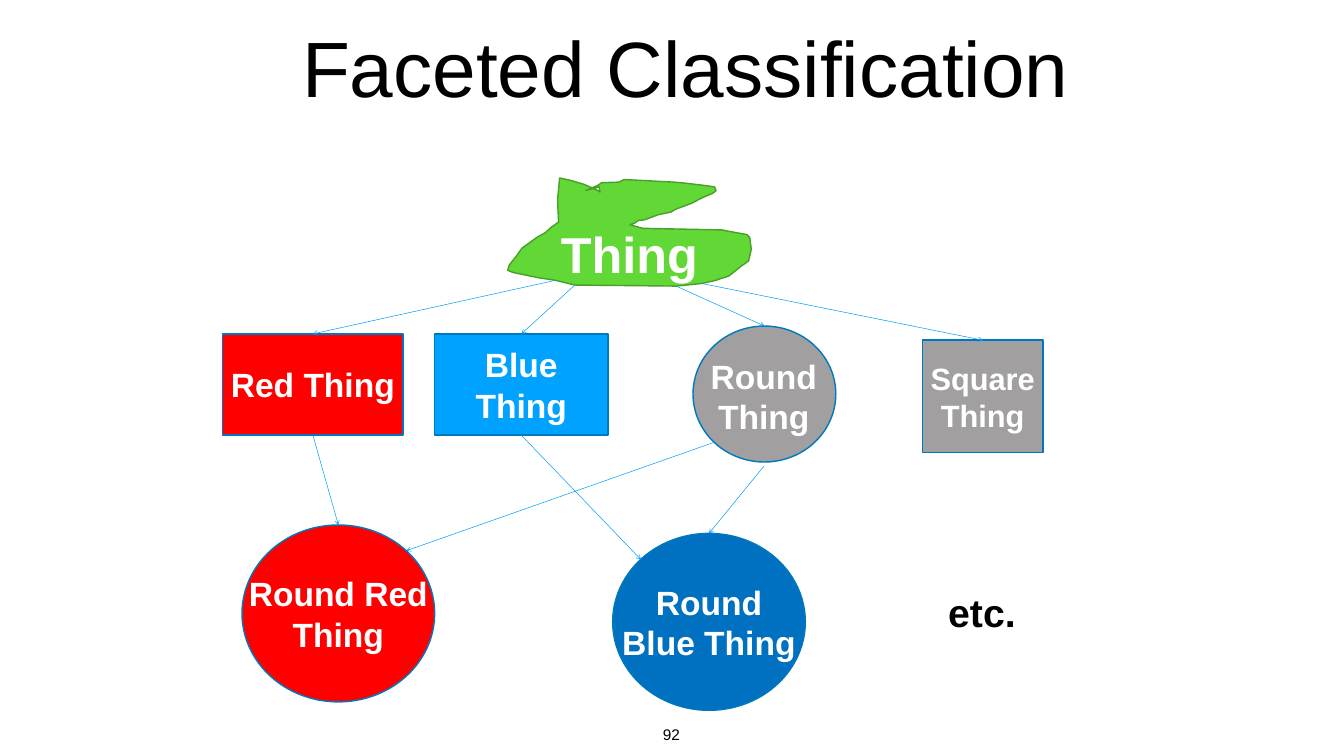
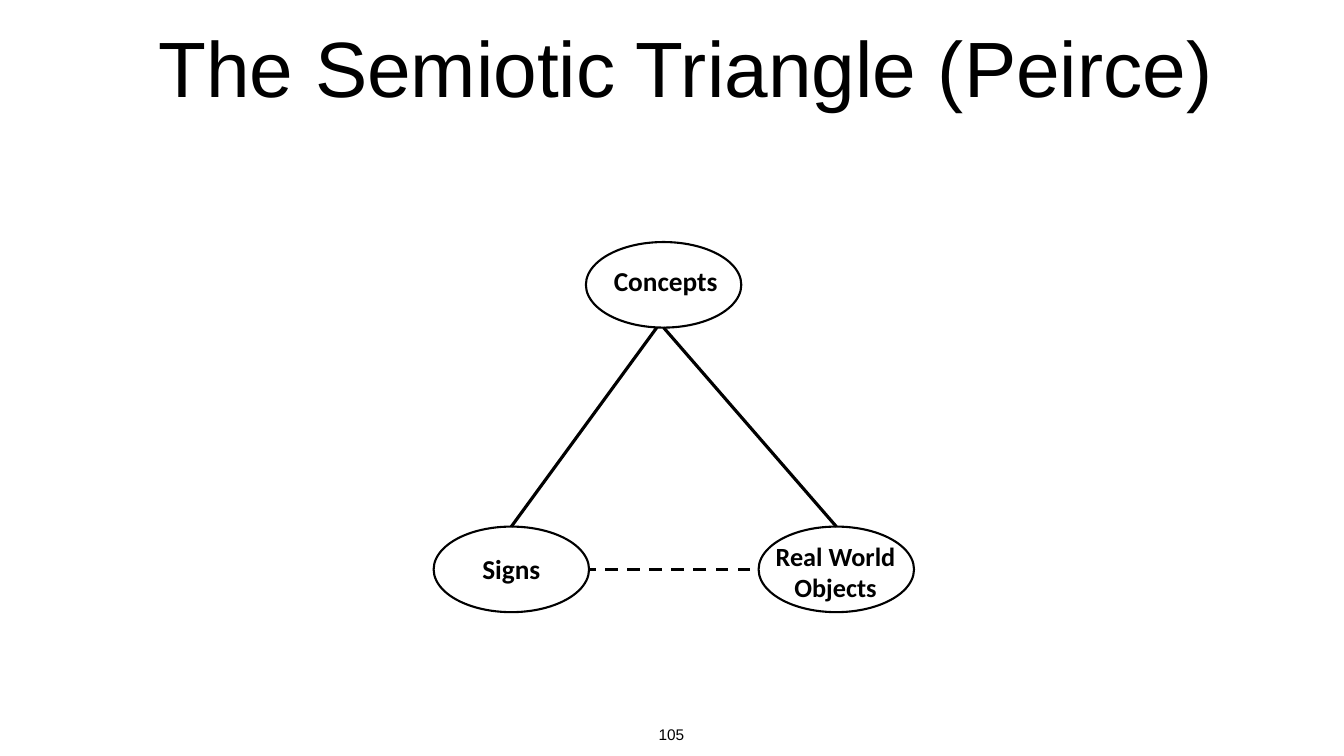
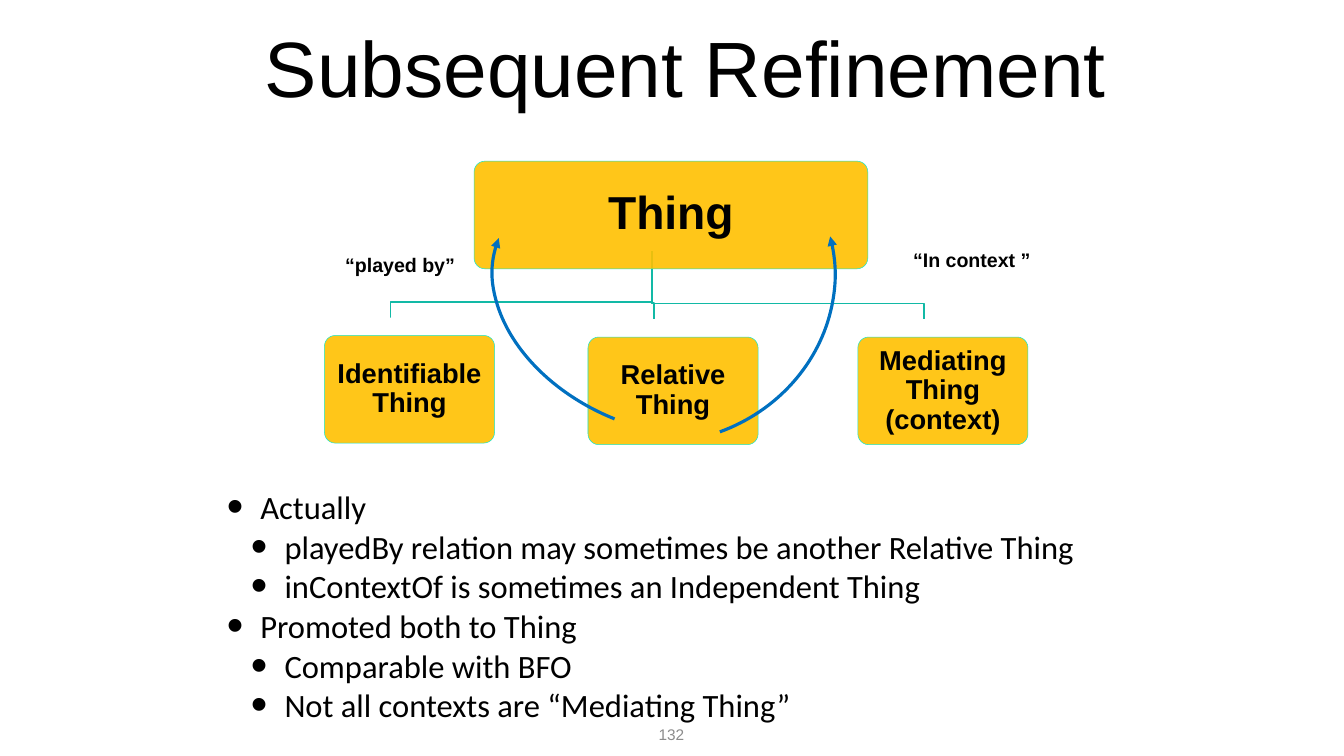
from lxml.etree import SubElement
from pptx import Presentation
from pptx.dml.color import RGBColor
from pptx.enum.dml import MSO_LINE
from pptx.enum.shapes import MSO_CONNECTOR, MSO_SHAPE
from pptx.enum.text import MSO_ANCHOR, PP_ALIGN
from pptx.oxml.ns import qn
from pptx.util import Pt

PX = 9525
SLIDE_SIZE = (2560, 1440)
TITLE_BOX = (261, 0, 2089, 251)
NUMBER_BOX = (1243, 1373, 72, 51)
DEFAULT_INSETS = (10, 5, 10, 5)
EVEN_INSETS = (8, 8, 8, 8)

BLACK = RGBColor(0x00, 0x00, 0x00)
WHITE = RGBColor(0xFF, 0xFF, 0xFF)
NUMBER_GREY = RGBColor(0x8C, 0x8C, 0x8C)
RED = RGBColor(0xFF, 0x00, 0x00)
GREY = RGBColor(0xA1, 0x9F, 0x9F)
SKY = RGBColor(0x00, 0xA2, 0xFF)
BLUE = RGBColor(0x00, 0x70, 0xC0)
OUTLINE_BLUE = RGBColor(0x00, 0x78, 0xBD)
ARROW_BLUE = RGBColor(0x00, 0x9E, 0xF9)
LEAF = RGBColor(0x61, 0xD8, 0x36)
LEAF_EDGE = RGBColor(0x48, 0xA0, 0x28)
AMBER = RGBColor(0xFF, 0xC0, 0x00)
CARD_EDGE = RGBColor(0x16, 0xE7, 0xCF)
TEAL = RGBColor(0x12, 0xB9, 0xA6)

THING_OUTLINE = [
    (1116, 363), (1139, 353), (1146, 348), (1179, 347), (1189, 342),
    (1284, 347), (1297, 348), (1340, 353), (1361, 356), (1364, 363),
    (1358, 368), (1337, 377), (1318, 387), (1286, 399), (1278, 404),
    (1254, 409), (1227, 419), (1216, 420), (1209, 425), (1200, 428),
    (1224, 435), (1375, 438), (1385, 440), (1423, 447), (1428, 452),
    (1431, 475), (1426, 497), (1412, 507), (1388, 526), (1372, 531),
    (1364, 534), (1337, 540), (1288, 545), (1095, 543), (1058, 534),
    (1025, 529), (977, 519), (967, 515), (970, 505), (985, 486),
    (994, 473), (1023, 452), (1039, 443), (1050, 433), (1064, 423),
    (1062, 381), (1066, 339), (1088, 344), (1112, 351), (1128, 358),
    (1139, 363), (1143, 366), (1141, 356),
]


def px(values):
    return [value * PX for value in values]


def paint(shape, fill=None, edge=None, width=2):
    shape.shadow.inherit = False
    if fill is None:
        shape.fill.background()
    else:
        shape.fill.solid()
        shape.fill.fore_color.rgb = fill
    if edge is None:
        shape.line.fill.background()
    else:
        shape.line.color.rgb = edge
        shape.line.width = Pt(width)


def write(shape, text, size, color=WHITE, font="Arial", bold=True,
          anchor=MSO_ANCHOR.MIDDLE, insets=DEFAULT_INSETS, wrap=True,
          align=PP_ALIGN.CENTER, spacing=None):
    frame = shape.text_frame
    frame.text = text
    frame.word_wrap = wrap
    frame.vertical_anchor = anchor
    (frame.margin_left, frame.margin_top,
     frame.margin_right, frame.margin_bottom) = px(insets)
    for paragraph in frame.paragraphs:
        paragraph.alignment = align
        paragraph.line_spacing = spacing
        for run in paragraph.runs:
            run.font.name = font
            run.font.size = Pt(size)
            run.font.bold = bold
            run.font.color.rgb = color


def add_label(slide, box, text, size, **style):
    label = slide.shapes.add_textbox(*px(box))
    write(label, text, size, **style)
    return label


def add_block(slide, kind, box, fill, edge, width=2):
    block = slide.shapes.add_shape(kind, *px(box))
    paint(block, fill, edge, width)
    return block


def add_outline(slide, points, closed):
    builder = slide.shapes.build_freeform(*points[0], scale=PX)
    builder.add_line_segments(points[1:], close=closed)
    return builder.convert_to_shape()


def add_arrowhead(shape, kind):
    SubElement(shape.line._get_or_add_ln(), qn("a:tailEnd"), type=kind)


def add_link(slide, start, end, color, width):
    begin_point = start if isinstance(start, tuple) else (0, 0)
    end_point = end if isinstance(end, tuple) else (0, 0)
    link = slide.shapes.add_connector(
        MSO_CONNECTOR.STRAIGHT, *px(begin_point + end_point))
    if not isinstance(start, tuple):
        link.begin_connect(start, 2)
    if not isinstance(end, tuple):
        link.end_connect(end, 0)
    link.line.color.rgb = color
    link.line.width = Pt(width)
    SubElement(link._element.spPr, qn("a:effectLst"))
    return link


def add_arc(slide, box, rotation, sweep=None, flipped=False):
    arc = slide.shapes.add_shape(MSO_SHAPE.ARC, *px(box))
    if sweep:
        arc.adjustments[0], arc.adjustments[1] = sweep
    arc.rotation = rotation
    if flipped:
        arc._element.spPr.find(qn("a:xfrm")).set("flipV", "1")
    paint(arc, None, BLUE, 4.5)
    add_arrowhead(arc, "triangle")


def add_rounded(slide, box, fill, edge=None):
    rounded = add_block(slide, MSO_SHAPE.ROUNDED_RECTANGLE, box, fill, edge, 0.75)
    rounded.adjustments[0] = 0.1
    return rounded


def add_card(slide, box, text, size, inset):
    card = add_rounded(slide, box, AMBER, CARD_EDGE)
    amber = card._element.spPr.find(qn("a:solidFill"))[0]
    SubElement(amber, qn("a:alpha"), val="90000")
    left, top, width, height = box
    add_label(slide, (left + 6, top + 6, width - 12, height - 12), text, size,
              color=BLACK, insets=(inset,) * 4, spacing=0.9)


def add_bullets(slide, box, items):
    body = add_label(slide, box, "\n".join(text for _, text in items), 46.5,
                     color=BLACK, font="Calibri", bold=False,
                     anchor=MSO_ANCHOR.TOP, insets=EVEN_INSETS,
                     align=PP_ALIGN.LEFT, spacing=0.8)
    for paragraph, (level, _) in zip(body.text_frame.paragraphs, items):
        paragraph.level = level
        paragraph.space_before = Pt(12)
        properties = paragraph._p.get_or_add_pPr()
        properties.set("marL", str((64 + 46 * level) * PX))
        properties.set("indent", str(-64 * PX))
        SubElement(properties, qn("a:buSzPct"), val="145000")
        SubElement(properties, qn("a:buFont"), typeface="Arial")
        SubElement(properties, qn("a:buChar"), char="•")


def start_slide(deck, title, number, number_color=BLACK):
    slide = deck.slides.add_slide(deck.slide_layouts[6])
    add_label(slide, TITLE_BOX, title, 112, color=BLACK, bold=False,
              insets=EVEN_INSETS)
    add_label(slide, NUMBER_BOX, number, 22, color=number_color, bold=False,
              anchor=MSO_ANCHOR.TOP, insets=EVEN_INSETS, wrap=False)
    return slide


def build_facets(deck):
    slide = start_slide(deck, "Faceted Classification", "92")
    thing = add_outline(slide, THING_OUTLINE, True)
    paint(thing, LEAF, LEAF_EDGE)
    write(thing, "Thing", 72, anchor=MSO_ANCHOR.BOTTOM)

    rectangles = []
    for box, fill, text, size in [
        ((424, 636, 344, 193), RED, "Red Thing", 48),
        ((828, 636, 330, 193), SKY, "Blue Thing", 48),
        ((1757, 648, 230, 214), GREY, "Square Thing", 44),
    ]:
        rectangle = add_block(slide, MSO_SHAPE.RECTANGLE, box, fill, OUTLINE_BLUE)
        write(rectangle, text, size)
        rectangles.append(rectangle)
    red, blue, square = rectangles

    circles = []
    for box, fill, label_box, text in [
        ((1320, 621, 272, 259), GREY, (1288, 621, 334, 266), "Round Thing"),
        ((461, 1000, 367, 337), RED, (461, 1019, 367, 300), "Round Red Thing"),
        ((1167, 1016, 367, 337), BLUE, (1167, 1035, 367, 300), "Round Blue Thing"),
    ]:
        circles.append(add_block(slide, MSO_SHAPE.OVAL, box, fill, OUTLINE_BLUE))
        add_label(slide, label_box, text, 48)
    round_thing, round_red, round_blue = circles

    for start, end in [
        ((1058, 534), red), ((1095, 543), blue),
        ((1288, 545), round_thing), ((1337, 540), square),
        (red, round_red), ((1359, 843), (774, 1049)),
        (blue, (1221, 1066)), ((1455, 888), round_blue),
    ]:
        add_arrowhead(add_link(slide, start, end, ARROW_BLUE, 0.75), "arrow")
    add_label(slide, (1796, 1115, 149, 100), "etc.", 56, color=BLACK,
              anchor=MSO_ANCHOR.TOP, wrap=False)


def build_triangle(deck):
    slide = start_slide(deck, "The Semiotic Triangle (Peirce)", "105")
    corners = []
    for left, top, label_box, text, size in [
        (1116, 461, (1144, 497, 248, 102), "Concepts", 39),
        (826, 1003, (850, 1044, 248, 102), "Signs", 39),
        (1445, 1003, (1445, 1022, 293, 141), "Real World Objects", 37.5),
    ]:
        corners.append(add_block(slide, MSO_SHAPE.OVAL, (left, top, 296, 163),
                                 WHITE, BLACK, 3))
        add_label(slide, label_box, text, size, color=BLACK, font="Calibri",
                  anchor=MSO_ANCHOR.TOP, insets=(14, 7, 14, 7))
    _, signs, objects = corners
    add_link(slide, (1251, 624), signs, BLACK, 4.5)
    add_link(slide, (1264, 624), objects, BLACK, 4.5)
    indirect = add_link(slide, (1429, 1085), (1121, 1085), BLACK, 4.5)
    indirect.line.dash_style = MSO_LINE.DASH


def build_refinement(deck):
    slide = start_slide(deck, "Subsequent Refinement", "132", NUMBER_GREY)
    trunk, trunk_top = 1242, 479
    for branch, elbow, bottom in [
        (1760, 578, 608), (1246, 577, 608), (744, 575, 605),
    ]:
        path_down = [(trunk, trunk_top), (trunk, elbow),
                     (branch, elbow), (branch, bottom)]
        paint(add_outline(slide, path_down, False), None, TEAL)

    add_card(slide, (903, 307, 750, 205), "Thing", 66, 27)
    for left, top, text in [
        (618, 639, "Identifiable Thing"),
        (1120, 642, "Relative Thing"),
        (1634, 642, "Mediating Thing (context)"),
    ]:
        add_rounded(slide, (left - 36, top - 34, 324, 205), WHITE)
        add_card(slide, (left, top, 324, 205), text, 39, 15)

    add_arc(slide, (941, 232, 652, 609), 340, (162, 213.2), flipped=True)
    add_arc(slide, (926, 341, 666, 474), 201.9)
    for box, text in [
        ((1677, 463, 348, 96), "“In context ”"),
        ((638, 472, 248, 66), "“played by”"),
    ]:
        add_label(slide, box, text, 28, color=BLACK, anchor=MSO_ANCHOR.TOP,
                  insets=(19, 10, 19, 10), wrap=False)
    add_bullets(slide, (424, 934, 1728, 458), [
        (0, "Actually"),
        (1, "playedBy relation may sometimes be another Relative Thing"),
        (1, "inContextOf is sometimes an Independent Thing"),
        (0, "Promoted both to Thing"),
        (1, "Comparable with BFO"),
        (1, "Not all contexts are “Mediating Thing”"),
    ])


def main():
    deck = Presentation()
    deck.slide_width, deck.slide_height = px(SLIDE_SIZE)
    build_facets(deck)
    build_triangle(deck)
    build_refinement(deck)
    deck.save("out.pptx")


if __name__ == "__main__":
    main()
